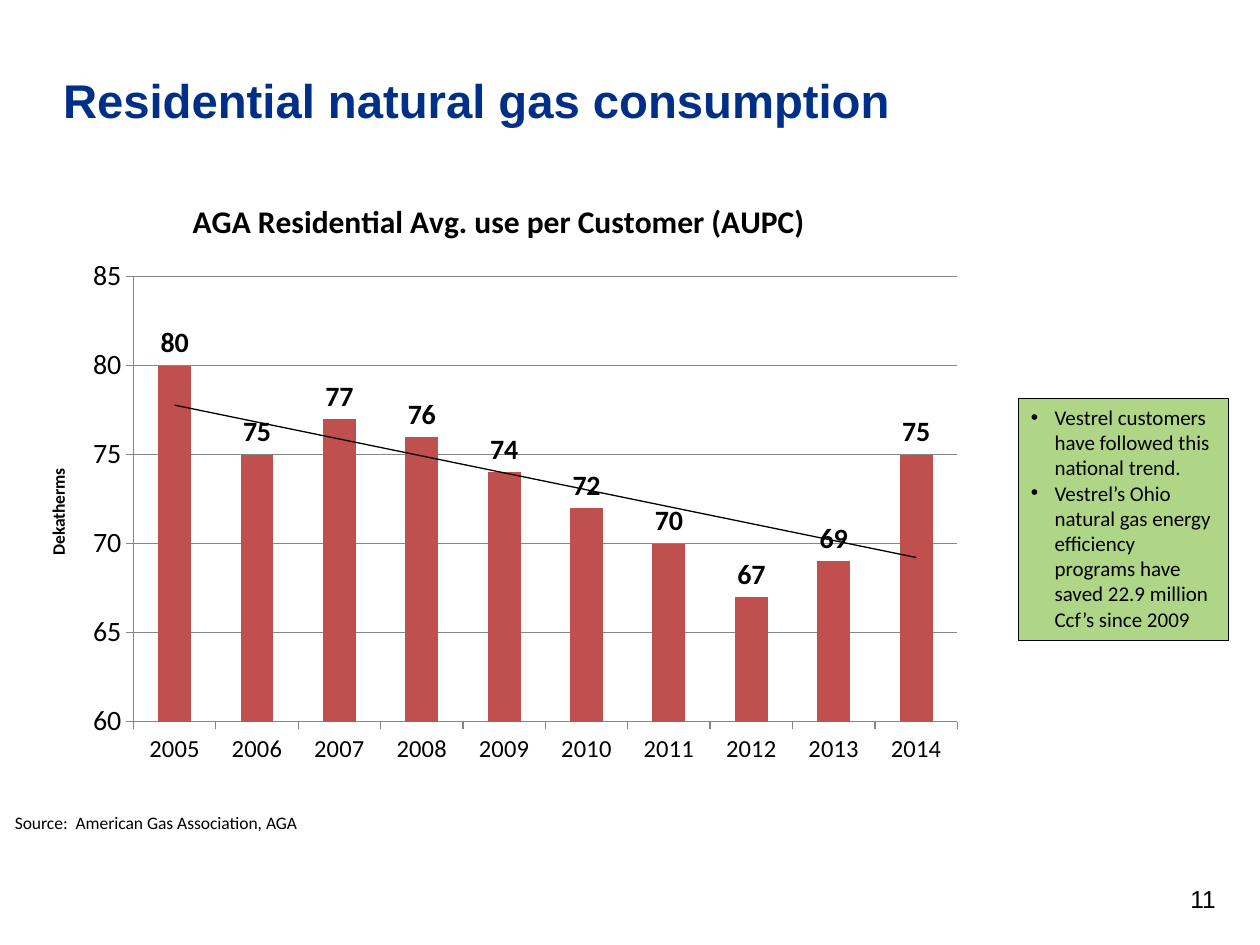
from lxml import etree
from pptx import Presentation
from pptx.chart.data import CategoryChartData
from pptx.dml.color import RGBColor
from pptx.enum import chart as ch, shapes, text
from pptx.oxml import parse_xml
from pptx.oxml.ns import nsdecls, qn
from pptx.util import Cm, Pt

NAVY = RGBColor(0x00, 0x2F, 0x87)
RED = RGBColor(0xC0, 0x50, 0x4D)
GREEN = RGBColor(0xAF, 0xD6, 0x86)
GREY = RGBColor(0x86, 0x86, 0x86)
BLACK = RGBColor(0, 0, 0)

TITLE = "Residential natural gas consumption"
CHART_TITLE = "AGA Residential Avg. use per Customer (AUPC)"
AXIS_TITLE = "Dekatherms"
USE = {"2005": 80, "2006": 75, "2007": 77, "2008": 76, "2009": 74,
       "2010": 72, "2011": 70, "2012": 67, "2013": 69, "2014": 75}
NOTES = [
    "Vestrel customers have followed this national trend.",
    "Vestrel’s Ohio natural gas energy efficiency programs have saved "
    "22.9 million Ccf’s since 2009",
]
SOURCE = "Source:  American Gas Association, AGA"
PAGE = "11"

CHART_W, CHART_H = Cm(19.25), Cm(12.07)


def style(font, size, color=BLACK, name="Calibri", bold=False):
    font.size, font.name, font.bold = Pt(size), name, bold
    font.color.rgb = color


def add_run(p, words, *args, **kwargs):
    r = p.add_run()
    r.text = words
    style(r.font, *args, **kwargs)


def add_label(s, box, words, size, name, align):
    tf = s.shapes.add_textbox(*box).text_frame
    tf.word_wrap = True
    p = tf.paragraphs[0]
    p.alignment = align
    add_run(p, words, size, name=name)


def set_layout(parent, index, inner=False, **lengths):
    """Place a chart part by lengths measured inside the chart frame."""
    for old in parent.findall(qn("c:layout")):
        parent.remove(old)
    layout = etree.Element(qn("c:layout"))
    manual = etree.SubElement(layout, qn("c:manualLayout"))
    values = {"layoutTarget": "inner"} if inner else {}
    values.update(xMode="edge", yMode="edge")
    for tag, length in lengths.items():
        values[tag] = length / (CHART_W if tag in "xw" else CHART_H)
    for tag, value in values.items():
        etree.SubElement(manual, qn("c:" + tag)).set("val", str(value))
    parent.insert(index, layout)


def add_trend_line(series):
    trend = parse_xml(
        f'<c:trendline {nsdecls("c", "a")}><c:spPr><a:ln w="9525"><a:solidFill>'
        f'<a:srgbClr val="{BLACK}"/></a:solidFill></a:ln></c:spPr>'
        '<c:trendlineType val="linear"/><c:dispRSqr val="0"/>'
        '<c:dispEq val="0"/></c:trendline>')
    series._element.find(qn("c:cat")).addprevious(trend)


def add_bullet(p, indent):
    pPr = p._p.get_or_add_pPr()
    pPr.set("marL", str(indent))
    pPr.set("indent", str(-indent))
    etree.SubElement(pPr, qn("a:buFont")).set("typeface", "Arial")
    etree.SubElement(pPr, qn("a:buChar")).set("char", "•")


def add_use_chart(s):
    data = CategoryChartData()
    data.categories = list(USE)
    data.add_series("Series 1", list(USE.values()))
    chart = s.shapes.add_chart(
        ch.XL_CHART_TYPE.COLUMN_CLUSTERED,
        Cm(0.43), Cm(3.6), CHART_W, CHART_H, data).chart
    style(chart.font, 10)
    chart.has_legend = False
    add_run(chart.chart_title.text_frame.paragraphs[0], CHART_TITLE, 18, bold=True)
    set_layout(chart.chart_title._element, 1, x=Cm(3.34), y=Cm(0.3))
    set_layout(chart._chartSpace.chart.plotArea, 0, inner=True,
               x=Cm(2.26), y=Cm(1.98), w=Cm(16.61), h=Cm(8.97))

    years, therms = chart.category_axis, chart.value_axis
    for axis, size in ((years, 14), (therms, 16)):
        style(axis.tick_labels.font, size)
        axis.major_tick_mark = ch.XL_TICK_MARK.OUTSIDE
        axis.format.line.color.rgb = GREY
    therms.minimum_scale, therms.maximum_scale, therms.major_unit = 60, 85, 5
    therms.major_gridlines.format.line.color.rgb = GREY
    add_run(therms.axis_title.text_frame.paragraphs[0], AXIS_TITLE, 10, bold=True)

    plot = chart.plots[0]
    plot.gap_width = 150
    plot.vary_by_categories = False
    series = plot.series[0]
    series.format.fill.solid()
    series.format.fill.fore_color.rgb = RED
    labels = series.data_labels
    labels.show_value = True
    labels.position = ch.XL_LABEL_POSITION.OUTSIDE_END
    style(labels.font, 16, bold=True)
    add_trend_line(series)


def add_note_box(s):
    sp = s.shapes.add_shape(shapes.MSO_SHAPE.RECTANGLE,
                            Cm(20.53), Cm(8.03), Cm(4.24), Cm(4.88))
    sp.shadow.inherit = False
    sp.fill.solid()
    sp.fill.fore_color.rgb = GREEN
    sp.line.color.rgb = BLACK
    sp.line.width = Pt(0.75)
    tf = sp.text_frame
    tf.word_wrap = True
    tf.vertical_anchor = text.MSO_ANCHOR.TOP
    for i, note in enumerate(NOTES):
        p = tf.add_paragraph() if i else tf.paragraphs[0]
        p.alignment = text.PP_ALIGN.LEFT
        add_bullet(p, Cm(0.48))
        add_run(p, note, 12)


def add_title(s):
    sp = s.shapes.title
    sp.left, sp.top, sp.width, sp.height = Cm(1.27), Cm(0), Cm(23.5), Cm(3.18)
    tf = sp.text_frame
    tf.vertical_anchor = text.MSO_ANCHOR.MIDDLE
    tf.margin_left = tf.margin_right = 0
    tf.margin_top, tf.margin_bottom = Cm(0.96), Cm(0.13)
    p = tf.paragraphs[0]
    p.alignment = text.PP_ALIGN.LEFT
    add_run(p, TITLE, 27, NAVY, "Arial", True)


def main():
    prs = Presentation()
    prs.slide_width, prs.slide_height = Cm(25.4), Cm(19.05)
    s = prs.slides.add_slide(prs.slide_layouts[5])
    add_title(s)
    add_label(s, (Cm(0.05), Cm(16.25), Cm(10.36), Cm(0.69)),
              SOURCE, 10, "Calibri", text.PP_ALIGN.LEFT)
    add_use_chart(s)
    add_note_box(s)
    add_label(s, (Cm(21.79), Cm(17.7), Cm(2.97), Cm(0.86)),
              PAGE, 14, "Arial", text.PP_ALIGN.RIGHT)
    prs.save("out.pptx")


if __name__ == "__main__":
    main()
